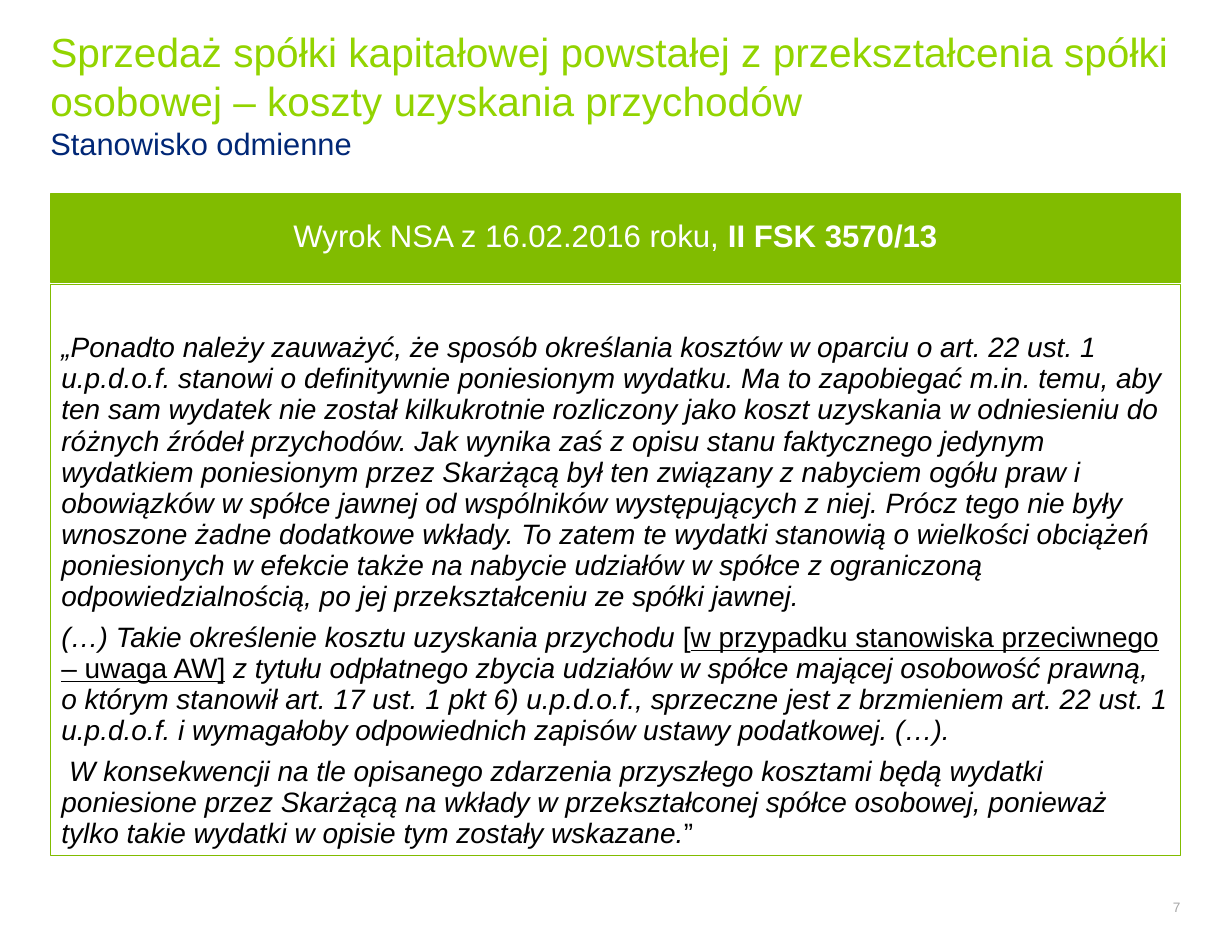
import pptx
import pptx.util
import pptx.dml.color
import pptx.enum.shapes
import pptx.enum.text

Inches = pptx.util.Inches
Pt = pptx.util.Pt
ALIGN = pptx.enum.text.PP_ALIGN
ANCHOR = pptx.enum.text.MSO_ANCHOR

COLORS = {
    "lime": "92D400",
    "navy": "002776",
    "green": "81BC00",
    "white": "FFFFFF",
    "black": "000000",
    "grey": "A6A6A6",
}
LEFT, WIDTH = 0.45, 10.09

QUOTE = [
    [("„Ponadto należy zauważyć, że sposób określania kosztów w oparciu o art. 22 ust. 1 "
      "u.p.d.o.f. stanowi o definitywnie poniesionym wydatku. Ma to zapobiegać m.in. temu, "
      "aby ten sam wydatek nie został kilkukrotnie rozliczony jako koszt uzyskania w "
      "odniesieniu do różnych źródeł przychodów. Jak wynika zaś z opisu stanu faktycznego "
      "jedynym wydatkiem poniesionym przez Skarżącą był ten związany z nabyciem ogółu praw i "
      "obowiązków w spółce jawnej od wspólników występujących z niej. Prócz tego nie były "
      "wnoszone żadne dodatkowe wkłady. To zatem te wydatki stanowią o wielkości obciążeń "
      "poniesionych w efekcie także na nabycie udziałów w spółce z ograniczoną "
      "odpowiedzialnością, po jej przekształceniu ze spółki jawnej.", {"italic": True})],
    [("(…) Takie określenie kosztu uzyskania przychodu ", {"italic": True}),
     ("[", {}),
     ("w przypadku stanowiska przeciwnego – uwaga AW]", {"underline": True}),
     (" ", {}),
     ("z tytułu odpłatnego zbycia udziałów w spółce mającej osobowość prawną, o którym "
      "stanowił art. 17 ust. 1 pkt 6) u.p.d.o.f., sprzeczne jest z brzmieniem art. 22 ust. 1 "
      "u.p.d.o.f. i wymagałoby odpowiednich zapisów ustawy podatkowej. (…).",
      {"italic": True})],
    [(" W konsekwencji na tle opisanego zdarzenia przyszłego kosztami będą wydatki poniesione "
      "przez Skarżącą na wkłady w przekształconej spółce osobowej, ponieważ tylko takie "
      "wydatki w opisie tym zostały wskazane.", {"italic": True}),
     ("”", {})],
]


class SlideBuilder:
    font = "Arial"

    def __init__(self, slide):
        self.s = slide

    def color(self, name):
        return pptx.dml.color.RGBColor.from_string(COLORS[name])

    def style(self, font, size, color):
        font.name = self.font
        font.size = Pt(size)
        font.color.rgb = self.color(color)

    def frame(self, sp, anchor, inset, bottom):
        tf = sp.text_frame
        tf.word_wrap = True
        tf.vertical_anchor = anchor
        tf.margin_left = tf.margin_right = tf.margin_top = Inches(inset)
        tf.margin_bottom = Inches(bottom)
        return tf

    def text(self, x, y, w, h, lines, align=ALIGN.LEFT):
        sp = self.s.shapes.add_textbox(Inches(x), Inches(y), Inches(w), Inches(h))
        p = self.frame(sp, ANCHOR.MIDDLE, 0, 0).paragraphs[0]
        p.alignment = align
        for i, (words, size, color) in enumerate(lines):
            if i:
                p.add_line_break()
            r = p.add_run()
            r.text = words
            self.style(r.font, size, color)

    def panel(self, x, y, w, h, fill, paragraphs, size, color, align=ALIGN.LEFT,
              anchor=ANCHOR.MIDDLE, bottom=0.1):
        sp = self.s.shapes.add_shape(pptx.enum.shapes.MSO_SHAPE.RECTANGLE,
                                     Inches(x), Inches(y), Inches(w), Inches(h))
        sp.shadow.inherit = False
        sp.fill.solid()
        sp.fill.fore_color.rgb = self.color(fill)
        sp.line.color.rgb = self.color("green")
        sp.line.width = Pt(1)
        tf = self.frame(sp, anchor, 0.1, bottom)
        for i, runs in enumerate(paragraphs):
            p = tf.add_paragraph() if i else tf.paragraphs[0]
            p.alignment = align
            p.line_spacing = Pt(20)
            p.space_after = Pt(6)
            self.style(p.font, size, color)
            for words, traits in runs:
                r = p.add_run()
                r.text = words
                self.style(r.font, size, color)
                for trait, value in traits.items():
                    setattr(r.font, trait, value)


def main():
    prs = pptx.Presentation()
    prs.slide_width, prs.slide_height = Inches(11), Inches(8.5)
    b = SlideBuilder(prs.slides.add_slide(prs.slide_layouts[6]))
    b.text(LEFT, 0.31, WIDTH, 1.07, [
        ("Sprzedaż spółki kapitałowej powstałej z przekształcenia spółki osobowej "
         "– koszty uzyskania przychodów", 26.1, "lime"),
        ("Stanowisko odmienne", 19.8, "navy"),
    ])
    b.text(9.59, 7.94, 0.95, 0.31, [("7", 8.8, "grey")], ALIGN.RIGHT)
    b.panel(LEFT, 1.73, WIDTH, 0.79, "green",
            [[("Wyrok NSA z 16.02.2016 roku, ", {}), ("II FSK 3570/13", {"bold": True})]],
            20, "white", ALIGN.CENTER)
    b.panel(LEFT, 2.54, WIDTH, 5.1, "white", QUOTE, 18, "black",
            anchor=ANCHOR.BOTTOM, bottom=0.06)
    prs.save("out.pptx")


if __name__ == "__main__":
    main()
